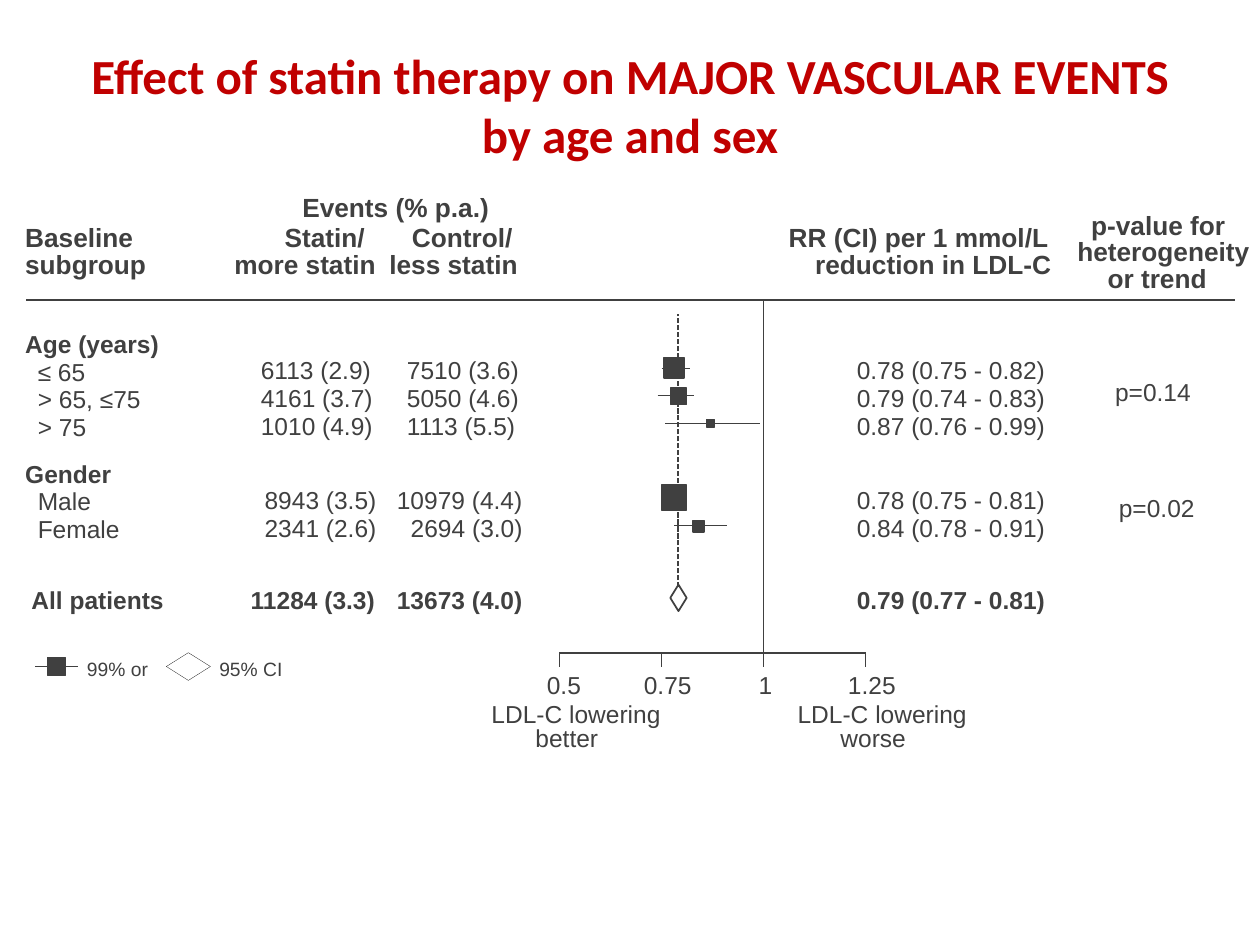
from lxml import etree
from pptx import Presentation
from pptx import util as u
from pptx.dml.color import RGBColor
from pptx.enum import dml, shapes, text
from pptx.oxml.ns import qn

PX = 9144  # EMU in one px, 100 px to the inch
INK, RED, WHITE, BLACK = "404040", "C00000", "FFFFFF", "000000"
BODY = {"name": "Arial", "size": u.Pt(14), "bold": False}
BOLD = {**BODY, "bold": True}
HEAD = {**BOLD, "size": u.Pt(15)}
KEY = {**BODY, "size": u.Pt(11)}
TITLE = {"name": "Calibri", "size": u.Pt(28), "bold": True}
HAIRLINE = 0.13
TOP_RULE, AXIS = 238, 518

HEADINGS = [
    ("Events (% p.a.)", 240, 152, 150),
    ("Baseline", 20, 176, 87), ("subgroup", 20, 197, 97),
    ("Statin/", 226, 176, 64), ("more statin", 186, 197, 113),
    ("Control/", 327, 176, 80), ("less statin", 309, 197, 103),
    ("RR (CI) per 1 mmol/L", 626, 176, 208), ("reduction in LDL-C", 647, 197, 189),
    ("p-value for", 866, 166, 107), ("heterogeneity", 855, 187, 138),
    ("or trend", 879, 208, 79),
]
AXIS_LABELS = [
    ("0.5", 434, 532, 28), ("0.75", 511, 532, 38),
    ("1", 602, 532, 11), ("1.25", 673, 532, 38),
    ("LDL-C lowering", 390, 555, 135), ("better", 425, 574, 50),
    ("LDL-C lowering", 633, 555, 135), ("worse", 667, 574, 52),
]
# label, label width, statin, control, (RR, low, high), marker size
AGE_ROWS = [
    ("≤ 65", 40, "6113 (2.9)", "7510 (3.6)", (0.78, 0.75, 0.82), 16),
    ("> 65, ≤75", 85, "4161 (3.7)", "5050 (4.6)", (0.79, 0.74, 0.83), 13),
    ("> 75", 39, "1010 (4.9)", "1113 (5.5)", (0.87, 0.76, 0.99), 6),
]
GENDER_ROWS = [
    ("Male", 48, "8943 (3.5)", "10979 (4.4)", (0.78, 0.75, 0.81), 20),
    ("Female", 66, "2341 (2.6)", "2694 (3.0)", (0.84, 0.78, 0.91), 9),
]
OVERALL = (0.79, 0.77, 0.81)
ROW_STEP = 22


def colour(hex_value):
    return RGBColor.from_string(hex_value)


def axis_x(ratio):
    """Horizontal place of a rate ratio on the axis."""
    return round(444 + (ratio - 0.5) * 324)


def add_title(page, words):
    box = page.shapes.add_textbox(0, 31 * PX, 1000 * PX, 99 * PX)
    box.text_frame.word_wrap = True
    para = box.text_frame.paragraphs[0]
    para.text = words
    para.alignment = text.PP_ALIGN.CENTER
    for span in para.runs:
        style_span(span, TITLE, RED)


def style_span(span, style, ink=INK):
    for name, value in style.items():
        setattr(span.font, name, value)
    span.font.color.rgb = colour(ink)


def add_label(page, words, left, top, width, style=BODY):
    """One unwrapped line of text without margins, in a box that fits it."""
    height = round(style["size"].pt * 1.7)
    box = page.shapes.add_textbox(left * PX, top * PX, width * PX, height * PX)
    frame = box.text_frame
    frame.word_wrap = False
    frame.auto_size = text.MSO_AUTO_SIZE.SHAPE_TO_FIT_TEXT
    for side in ("left", "right", "top", "bottom"):
        setattr(frame, f"margin_{side}", 0)
    span = frame.paragraphs[0].add_run()
    span.text = words
    style_span(span, style)


def add_line(page, x1, y1, x2, y2, weight=1, dash=None):
    line = page.shapes.add_connector(
        shapes.MSO_CONNECTOR.STRAIGHT, x1 * PX, y1 * PX, x2 * PX, y2 * PX)
    line.line.color.rgb = colour(INK)
    line.line.width = u.Pt(weight)
    if dash:
        line.line.dash_style = dash
    etree.SubElement(line._element.spPr, qn("a:effectLst"))


def add_mark(page, kind, left, top, width, height, fill=INK, edge=INK, weight=0):
    mark = page.shapes.add_shape(kind, left * PX, top * PX, width * PX, height * PX)
    mark.shadow.inherit = False
    if fill:
        mark.fill.solid()
        mark.fill.fore_color.rgb = colour(fill)
    else:
        mark.fill.background()
    mark.line.color.rgb = colour(edge)
    mark.line.width = u.Pt(weight)


def add_square(page, x, y, size, weight=0):
    """A square centred on x, y."""
    half = size // 2
    add_mark(page, shapes.MSO_SHAPE.RECTANGLE, x - half, y - half, size, size,
             weight=weight)


def add_values(page, statin, control, estimate, top, shift=0, style=BODY):
    """Event counts set against right edges, then the rate ratio."""
    for words, right in ((statin, 296), (control, 412)):
        width = 100 if len(words) > 10 else 89
        add_label(page, words, right + shift - width, top, width, style)
    ratio, low, high = estimate
    add_label(page, f"{ratio:.2f} ({low:.2f} - {high:.2f})", 680, top, 150, style)


def add_group(page, heading, heading_width, rows, top, shift, weight, edge):
    add_label(page, heading, 20, top - ROW_STEP + 1, heading_width, BOLD)
    for index, (label, width, statin, control, estimate, size) in enumerate(rows):
        row_top = top + index * ROW_STEP
        ratio, low, high = estimate
        add_label(page, label, 30, row_top + 1, width)
        add_values(page, statin, control, estimate, row_top, shift)
        middle = row_top + 10
        add_square(page, axis_x(ratio), middle, size, edge)
        add_line(page, axis_x(low), middle, axis_x(high), middle, weight)


def add_axis(page):
    no_effect = axis_x(1)
    add_line(page, no_effect, AXIS, no_effect, TOP_RULE)
    add_line(page, axis_x(0.5), AXIS, axis_x(1.25), AXIS)
    for tick in (0.5, 0.75, 1, 1.25):
        add_line(page, axis_x(tick), AXIS, axis_x(tick), AXIS + 11)
    for label in AXIS_LABELS:
        add_label(page, *label)


def add_overall(page):
    top, middle = 464, axis_x(OVERALL[0])
    add_label(page, "All patients", 25, top, 110, BOLD)
    add_values(page, "11284 (3.3)", "13673 (4.0)", OVERALL, top, 3, BOLD)
    add_mark(page, shapes.MSO_SHAPE.DIAMOND, middle - 6, top, 13, 21,
             fill=None, weight=1)
    add_line(page, middle, top + 2, middle, 249, dash=dml.MSO_LINE.SQUARE_DOT)


def add_key(page):
    add_square(page, 45, 529, 14)
    add_line(page, 28, 529, 62, 529, HAIRLINE)
    add_label(page, "99% or", 69, 522, 49, KEY)
    add_mark(page, shapes.MSO_SHAPE.DIAMOND, 132, 518, 35, 22,
             WHITE, BLACK, HAIRLINE)
    add_label(page, "95% CI", 174, 522, 51, KEY)


def main():
    deck = Presentation()
    deck.slide_width, deck.slide_height = 1000 * PX, 750 * PX
    page = deck.slides.add_slide(deck.slide_layouts[6])
    add_title(page, "Effect of statin therapy on MAJOR VASCULAR EVENTS\vby age and sex")
    add_axis(page)
    for heading in HEADINGS:
        add_label(page, *heading, HEAD)
    add_line(page, 21, TOP_RULE, 980, TOP_RULE)
    add_key(page)
    add_overall(page)
    add_group(page, "Gender", 69, GENDER_ROWS, 385, shift=3, weight=1, edge=1)
    add_label(page, "p=0.02", 888, 391, 62)
    add_group(page, "Age (years)", 107, AGE_ROWS, 282, shift=0, weight=HAIRLINE, edge=0)
    add_label(page, "p=0.14", 885, 299, 62)
    deck.save("out.pptx")


if __name__ == "__main__":
    main()
